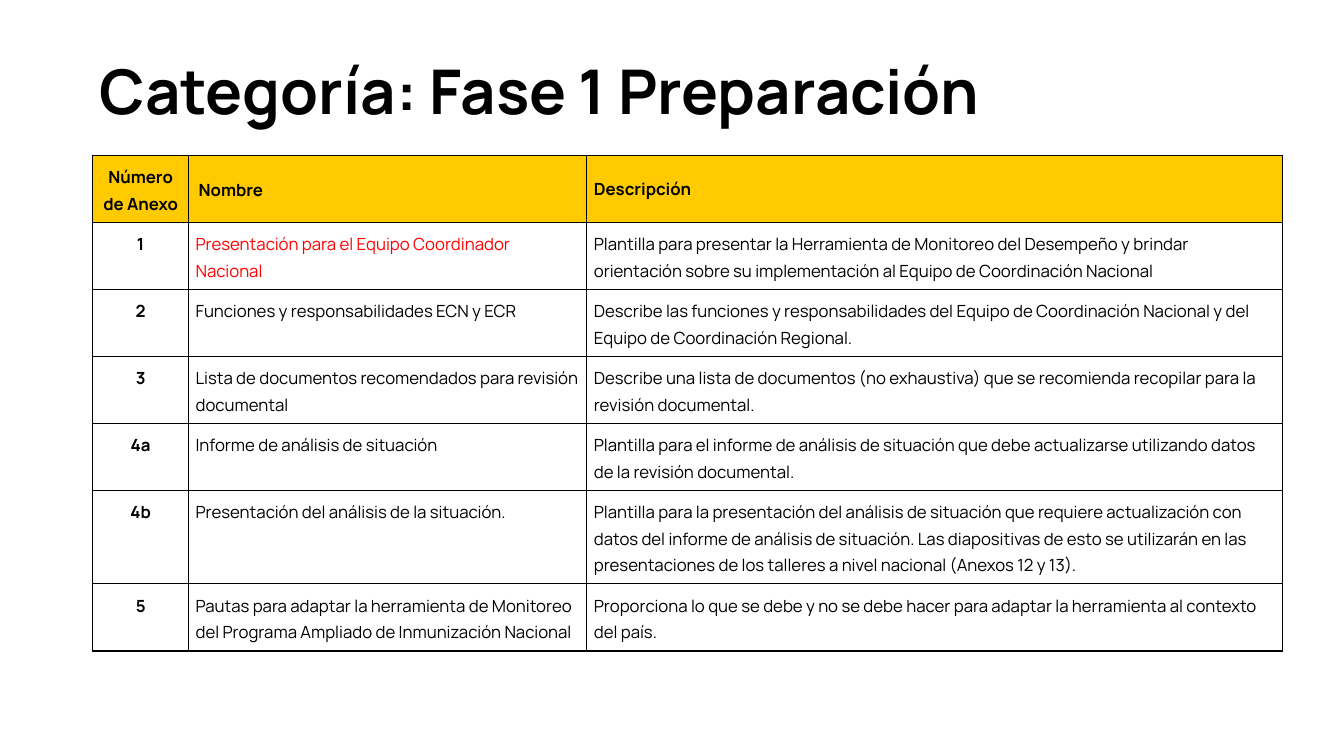
"""Builds the slide that lists the annexes of phase 1, preparation."""
from dataclasses import dataclass

from lxml.etree import SubElement
from pptx import Presentation
from pptx.dml.color import RGBColor as RGB
from pptx.enum.text import MSO_ANCHOR as ANCHOR, PP_ALIGN as ALIGN
from pptx.oxml.ns import qn
from pptx.util import Inches, Pt


@dataclass(frozen=True)
class Theme:
    font: str = "Manrope"
    title_size: int = 44
    table_size: int = 12
    text: str = "000000"
    accent: str = "FF0000"
    header: str = "FFCB00"
    border: str = "000000"
    border_width: float = 1


class SlideBuilder:
    def __init__(self, prs, theme):
        self.theme = theme
        self.slide = prs.slides.add_slide(prs.slide_layouts[5])

    def style(self, p, size, color, bold, spacing, align=ALIGN.LEFT):
        p.alignment = align
        p.line_spacing = spacing
        p.font.name = self.theme.font
        p.font.size = Pt(size)
        p.font.bold = bold
        p.font.color.rgb = RGB.from_string(color)

    def title(self, text, left, top, width, height):
        sp = self.slide.shapes.title
        sp.left, sp.top, sp.width, sp.height = map(Inches, (left, top, width, height))
        tf = sp.text_frame
        tf.text = text
        tf.word_wrap = True
        tf.vertical_anchor = ANCHOR.MIDDLE
        tf.margin_left = tf.margin_right = Inches(0.07)
        tf.margin_top = tf.margin_bottom = Inches(0.04)
        self.style(tf.paragraphs[0], self.theme.title_size, self.theme.text, True, 0.9)

    def borders(self, cell):
        tc_pr = cell._tc.get_or_add_tcPr()
        for i, side in enumerate(("lnL", "lnR", "lnT", "lnB")):
            ln = SubElement(tc_pr, qn(f"a:{side}"), w=str(Pt(self.theme.border_width)))
            fill = SubElement(ln, qn("a:solidFill"))
            SubElement(fill, qn("a:srgbClr"), val=self.theme.border)
            tc_pr.insert(i, ln)

    def cell(self, cell, text, header, centered, color, spacing, margins):
        cell.text = text
        cell.margin_left = cell.margin_right = Inches(margins[0])
        cell.margin_top = cell.margin_bottom = Inches(margins[1])
        cell.vertical_anchor = ANCHOR.MIDDLE if header else ANCHOR.TOP
        if header:
            cell.fill.solid()
            cell.fill.fore_color.rgb = RGB.from_string(self.theme.header)
        else:
            cell.fill.background()
        self.borders(cell)
        self.style(cell.text_frame.paragraphs[0], self.theme.table_size, color,
                   header or centered, spacing,
                   ALIGN.CENTER if centered else ALIGN.LEFT)

    def table(self, rows, left, top, widths, heights, highlighted):
        box = map(Inches, (left, top, sum(widths), sum(heights)))
        table = self.slide.shapes.add_table(len(rows), len(widths), *box).table
        table.first_row = table.horz_banding = False
        for column, width in zip(table.columns, widths):
            column.width = Inches(width)
        for r, (row, height) in enumerate(zip(rows, heights)):
            table.rows[r].height = Inches(height)
            for c, text in enumerate(row):
                color = self.theme.accent if (r, c) == highlighted else self.theme.text
                spacing = 1.0 if (r, c) == (0, 2) else 1.15
                margins = (0.1, 0.05) if (r, c) == (0, 1) else (0.07, 0.07)
                self.cell(table.cell(r, c), text, r == 0, c == 0, color, spacing, margins)


ANNEXES = [
    ("Número de Anexo", "Nombre", "Descripción"),
    ("1", "Presentación para el Equipo Coordinador Nacional",
     "Plantilla para presentar la Herramienta de Monitoreo del Desempeño y brindar "
     "orientación sobre su implementación al Equipo de Coordinación Nacional"),
    ("2", "Funciones y responsabilidades ECN y ECR",
     "Describe las funciones y responsabilidades del Equipo de Coordinación Nacional "
     "y del Equipo de Coordinación Regional."),
    ("3", "Lista de documentos recomendados para revisión documental",
     "Describe una lista de documentos (no exhaustiva) que se recomienda recopilar "
     "para la revisión documental."),
    ("4a", "Informe de análisis de situación",
     "Plantilla para el informe de análisis de situación que debe actualizarse "
     "utilizando datos de la revisión documental."),
    ("4b", "Presentación del análisis de la situación.",
     "Plantilla para la presentación del análisis de situación que requiere "
     "actualización con datos del informe de análisis de situación. Las diapositivas "
     "de esto se utilizarán en las presentaciones de los talleres a nivel nacional "
     "(Anexos 12 y 13)."),
    ("5", "Pautas para adaptar la herramienta de Monitoreo del Programa Ampliado de "
     "Inmunización Nacional",
     "Proporciona lo que se debe y no se debe hacer para adaptar la herramienta al "
     "contexto del país."),
]


def main():
    prs = Presentation()
    prs.slide_width, prs.slide_height = Inches(13.33), Inches(7.5)
    builder = SlideBuilder(prs, Theme())
    builder.title("Categoría: Fase 1 Preparación", 0.92, 0.21, 12.01, 1.45)
    heights = [0.66] * 5 + [0.92, 0.66]
    builder.table(ANNEXES, 0.92, 1.54, (0.95, 3.95, 6.9), heights, highlighted=(1, 1))
    prs.save("out.pptx")


if __name__ == "__main__":
    main()
